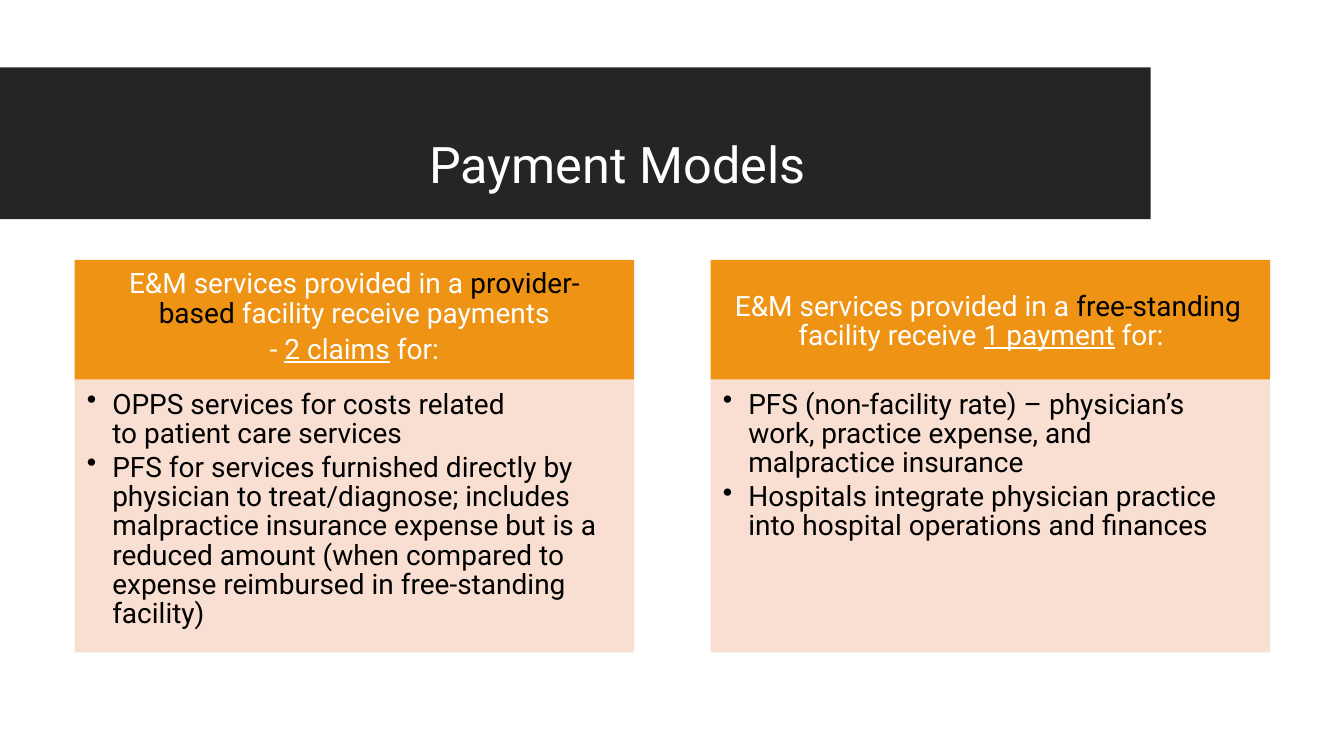
import pptx
import pptx.util
import pptx.dml.color
import pptx.enum.shapes
import pptx.enum.text
import pptx.oxml
import pptx.oxml.ns

Cm, Pt = pptx.util.Cm, pptx.util.Pt
RGBColor = pptx.dml.color.RGBColor
ALIGN = pptx.enum.text.PP_ALIGN
ANCHOR = pptx.enum.text.MSO_ANCHOR

CHARCOAL = RGBColor(0x25, 0x25, 0x25)
ORANGE = RGBColor(0xEF, 0x93, 0x15)
PEACH = RGBColor(0xF8, 0xDC, 0xCC)
WHITE = RGBColor(0xFF, 0xFF, 0xFF)
BLACK = RGBColor(0, 0, 0)
FONT = "Roboto"

# Content: runs are (text, colour, underlined); indents are in cm
TITLE = "Payment Models"
MODELS = [
    {
        "heading": [
            [("E&M services provided in a ", WHITE, False), ("provider-based ", BLACK, False),
             ("facility receive payments", WHITE, False)],
            [("- ", WHITE, False), ("2 claims", WHITE, True), (" for:", WHITE, False)],
        ],
        "heading_format": dict(top=0.26, align=ALIGN.CENTER, left=1.24, right=1.24, gap=4.8),
        "points": [
            ("OPPS services for costs related to patient care services", 3.05),
            ("PFS for services furnished directly by physician to treat/diagnose; includes "
             "malpractice insurance expense but is a reduced amount (when compared to "
             "expense reimbursed in free-standing facility)", 0.64),
        ],
    },
    {
        "heading": [
            [("E&M services provided in a ", WHITE, False), ("free-standing ", BLACK, False),
             ("facility receive ", WHITE, False), ("1 payment", WHITE, True),
             (" for:", WHITE, False)],
        ],
        "heading_format": dict(top=0.82, left=2.21, first=-1.6),
        "points": [
            ("PFS (non-facility rate) – physician’s work, practice expense, and "
             "malpractice insurance", 1.9),
            ("Hospitals integrate physician practice into hospital operations and finances", 1.02),
        ],
    },
]

# Layout in cm
COLUMN_LEFT, COLUMN_STEP, COLUMN_WIDTH = 1.88, 16.03, 14.1
HEADING_TOP, HEADING_HEIGHT, POINTS_HEIGHT = 6.55, 3.02, 6.87


def write(text, frame, color=BLACK, size=20, top=0.0, align=ALIGN.LEFT, anchor=ANCHOR.TOP,
          left=0.0, right=0.0, first=0.0, gap=0.0, line=20.9, bullet=None):
    """Add text, a string or a list of runs, as the next paragraph of a frame."""
    is_first = not frame.text
    if is_first:
        frame.word_wrap = True
        frame.auto_size = pptx.enum.text.MSO_AUTO_SIZE.NONE
        frame.vertical_anchor = anchor
        frame.margin_left = frame.margin_right = frame.margin_bottom = 0
        frame.margin_top = Cm(top)
    paragraph = frame.paragraphs[0] if is_first else frame.add_paragraph()
    paragraph.alignment = align
    paragraph.space_before = Pt(0 if is_first else gap)
    if line:
        paragraph.line_spacing = Pt(line)
    properties = paragraph._p.get_or_add_pPr()
    for name, length in (("marL", left), ("marR", right), ("indent", first)):
        properties.set(name, str(int(Cm(length))))
    if bullet:
        mark = pptx.oxml.parse_xml(
            f'<a:buChar {pptx.oxml.ns.nsdecls("a")} char="{bullet}"/>')
        properties.append(mark)
    paragraph.font.size = Pt(size)
    for words, run_color, underlined in ([(text, color, False)] if isinstance(text, str) else text):
        run = paragraph.add_run()
        run.text = words
        run.font.name, run.font.size = FONT, Pt(size)
        run.font.color.rgb = run_color
        if underlined:
            run.font.underline = True


def add_panel(slide, left, top, height, color, opacity=100):
    panel = slide.shapes.add_shape(pptx.enum.shapes.MSO_SHAPE.RECTANGLE,
                                   Cm(left), Cm(top), Cm(COLUMN_WIDTH), Cm(height))
    panel.shadow.inherit = False
    panel.fill.solid()
    panel.fill.fore_color.rgb = color
    panel.line.fill.background()
    if opacity < 100:
        fill_color = panel._element.spPr.find(".//" + pptx.oxml.ns.qn("a:srgbClr"))
        fill_color.append(pptx.oxml.parse_xml(
            f'<a:alpha {pptx.oxml.ns.nsdecls("a")} val="{opacity * 1000}"/>'))
    return panel.text_frame


def main():
    deck = pptx.Presentation()
    deck.slide_width, deck.slide_height = Cm(33.87), Cm(19.05)
    slide = deck.slides.add_slide(deck.slide_layouts[5])

    # Title band
    title = slide.shapes.title
    title.left, title.top, title.width, title.height = Cm(0), Cm(1.7), Cm(29), Cm(3.82)
    title.fill.solid()
    title.fill.fore_color.rgb = CHARCOAL
    write(TITLE, title.text_frame, color=WHITE, size=36, top=1.02, align=ALIGN.CENTER,
          anchor=ANCHOR.MIDDLE, left=2.13, line=None)

    # One column per payment model
    for number, model in enumerate(MODELS):
        left = COLUMN_LEFT + number * COLUMN_STEP
        heading = add_panel(slide, left, HEADING_TOP, HEADING_HEIGHT, ORANGE)
        for runs in model["heading"]:
            write(runs, heading, **model["heading_format"])
        points = add_panel(slide, left, HEADING_TOP + HEADING_HEIGHT, POINTS_HEIGHT, PEACH, 90)
        for point, right in model["points"]:
            write(point, points, top=0.27, left=0.95, first=-0.64, right=right, gap=3.5,
                  bullet="•")

    deck.save("out.pptx")


if __name__ == "__main__":
    main()
